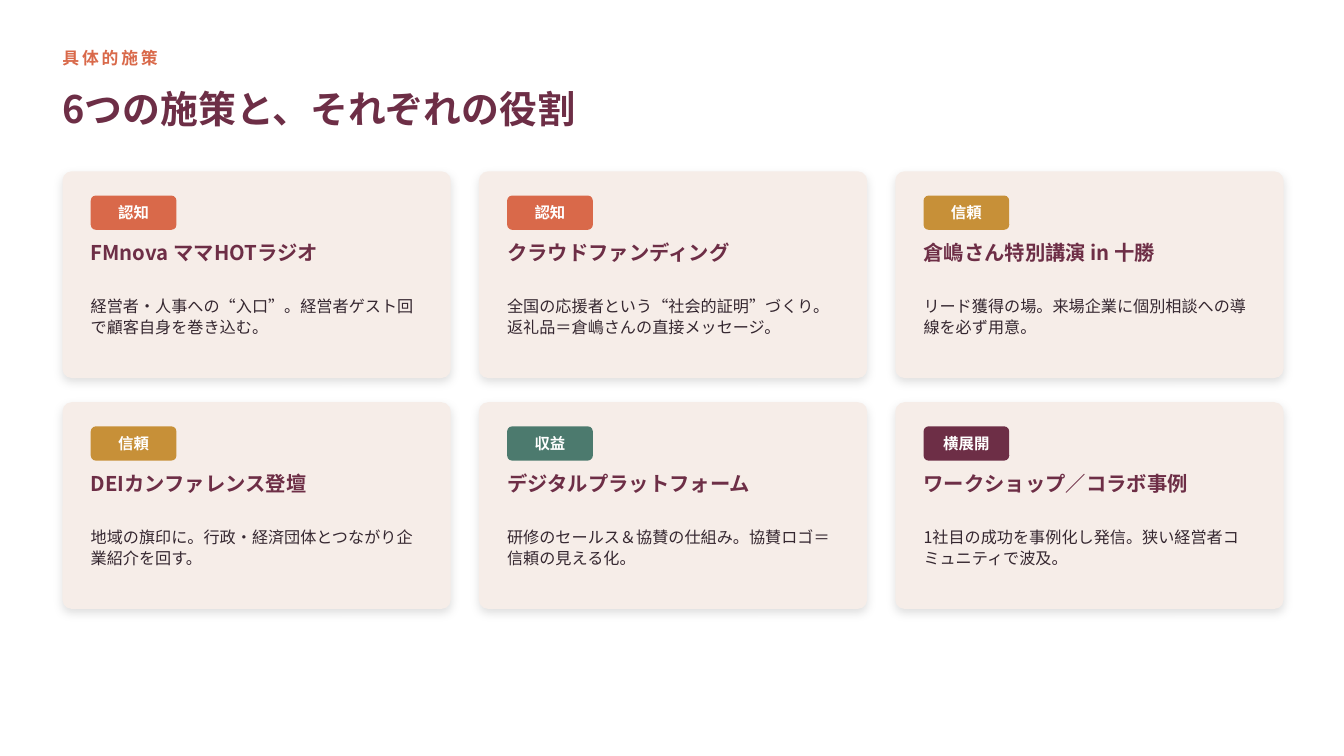
import lxml.etree
import pptx
import pptx.dml.color
import pptx.enum.shapes
import pptx.enum.text
import pptx.oxml.ns
import pptx.util

COLORS = {
    "coral": "D9694A",
    "plum": "6D2E46",
    "gold": "C79038",
    "green": "4C7A6E",
    "card": "F6EDE8",
    "ink": "352730",
    "white": "FFFFFF",
    "shadow": "000000",
}

MEASURES = [
    ("認知", "coral", "FMnova ママHOTラジオ",
     "経営者・人事への“入口”。経営者ゲスト回で顧客自身を巻き込む。"),
    ("認知", "coral", "クラウドファンディング",
     "全国の応援者という“社会的証明”づくり。返礼品＝倉嶋さんの直接メッセージ。"),
    ("信頼", "gold", "倉嶋さん特別講演 in 十勝",
     "リード獲得の場。来場企業に個別相談への導線を必ず用意。"),
    ("信頼", "gold", "DEIカンファレンス登壇",
     "地域の旗印に。行政・経済団体とつながり企業紹介を回す。"),
    ("収益", "green", "デジタルプラットフォーム",
     "研修のセールス＆協賛の仕組み。協賛ロゴ＝信頼の見える化。"),
    ("横展開", "plum", "ワークショップ／コラボ事例",
     "1社目の成功を事例化し発信。狭い経営者コミュニティで波及。"),
]


class MeasuresSlide:
    """Holds the style, the card grid and the slide being built."""

    FONT = "Noto Sans CJK JP"
    LEFT, TOP = 0.62, 1.7
    CARD_WIDTH, CARD_HEIGHT = 3.85, 2.05
    COLUMN_GAP, ROW_GAP = 0.28, 0.24
    COLUMNS = 3

    def __init__(self, presentation):
        self.slide = presentation.slides.add_slide(presentation.slide_layouts[5])

    def inches(self, *lengths):
        return [pptx.util.Inches(length) for length in lengths]

    def color(self, name):
        return pptx.dml.color.RGBColor.from_string(COLORS[name])

    def set_text(self, frame, wording, size, color, bold=False, centered=False,
                 middle=False, line_spacing=None, tracking=None):
        anchors = pptx.enum.text.MSO_ANCHOR
        alignments = pptx.enum.text.PP_ALIGN
        frame.word_wrap = True
        frame.auto_size = pptx.enum.text.MSO_AUTO_SIZE.NONE
        frame.margin_left = frame.margin_right = 0
        frame.margin_top = frame.margin_bottom = 0
        frame.vertical_anchor = anchors.MIDDLE if middle else anchors.TOP
        frame.text = wording
        paragraph = frame.paragraphs[0]
        paragraph.alignment = alignments.CENTER if centered else alignments.LEFT
        if line_spacing:
            paragraph.line_spacing = line_spacing
        font = paragraph.font
        font.name, font.size, font.bold = self.FONT, pptx.util.Pt(size), bold
        font.color.rgb = self.color(color)
        qn = pptx.oxml.ns.qn
        defaults = paragraph._p.pPr.find(qn("a:defRPr"))
        east_asian = lxml.etree.Element(qn("a:ea"), typeface=self.FONT)
        defaults.find(qn("a:latin")).addnext(east_asian)
        if tracking:
            defaults.set("spc", str(tracking * 100))

    def title(self, wording):
        heading = self.slide.shapes.title
        heading.left, heading.top, heading.width, heading.height = self.inches(
            self.LEFT, 0.72, 12.09, 0.72)
        self.set_text(heading.text_frame, wording, 27, "plum", bold=True, middle=True)

    def text(self, left, top, width, height, wording, size, color, **style):
        box = self.slide.shapes.add_textbox(*self.inches(left, top, width, height))
        self.set_text(box.text_frame, wording, size, color, **style)

    def panel(self, left, top, width, height, fill, radius):
        panel = self.slide.shapes.add_shape(
            pptx.enum.shapes.MSO_SHAPE.ROUNDED_RECTANGLE,
            *self.inches(left, top, width, height))
        panel.adjustments[0] = radius / min(width, height)
        panel.fill.solid()
        panel.fill.fore_color.rgb = self.color(fill)
        panel.line.fill.background()
        panel.shadow.inherit = False
        return panel

    def soft_shadow(self, panel):
        qn = pptx.oxml.ns.qn
        effects = panel._element.spPr.find(qn("a:effectLst"))
        shadow = lxml.etree.SubElement(
            effects, qn("a:outerShdw"), blurRad=str(pptx.util.Pt(7)),
            dist=str(pptx.util.Pt(3)), dir="5400000", algn="t", rotWithShape="0")
        tint = lxml.etree.SubElement(shadow, qn("a:srgbClr"), val=COLORS["shadow"])
        lxml.etree.SubElement(tint, qn("a:alpha"), val="12000")

    def badge(self, left, top, role, fill):
        badge = self.panel(left, top, 0.85, 0.34, fill, 0.05)
        self.set_text(badge.text_frame, role, 11, "white", bold=True,
                      centered=True, middle=True)

    def card(self, index, role, role_color, name, purpose):
        row, column = divmod(index, self.COLUMNS)
        left = self.LEFT + column * (self.CARD_WIDTH + self.COLUMN_GAP)
        top = self.TOP + row * (self.CARD_HEIGHT + self.ROW_GAP)
        self.soft_shadow(self.panel(
            left, top, self.CARD_WIDTH, self.CARD_HEIGHT, "card", 0.09))
        inner = left + 0.28
        self.badge(inner, top + 0.24, role, role_color)
        self.text(inner, top + 0.68, 3.35, 0.5, name, 14.5, "plum", bold=True)
        self.text(inner, top + 1.22, 3.3, 0.72, purpose, 11.5, "ink",
                  line_spacing=1.1)


def main():
    presentation = pptx.Presentation()
    presentation.slide_width = pptx.util.Inches(13.33)
    presentation.slide_height = pptx.util.Inches(7.5)
    page = MeasuresSlide(presentation)
    page.text(page.LEFT, 0.42, 11, 0.3, "具体的施策", 12, "coral",
              bold=True, middle=True, tracking=2)
    page.title("6つの施策と、それぞれの役割")
    for index, measure in enumerate(MEASURES):
        page.card(index, *measure)
    presentation.save("out.pptx")


if __name__ == "__main__":
    main()
